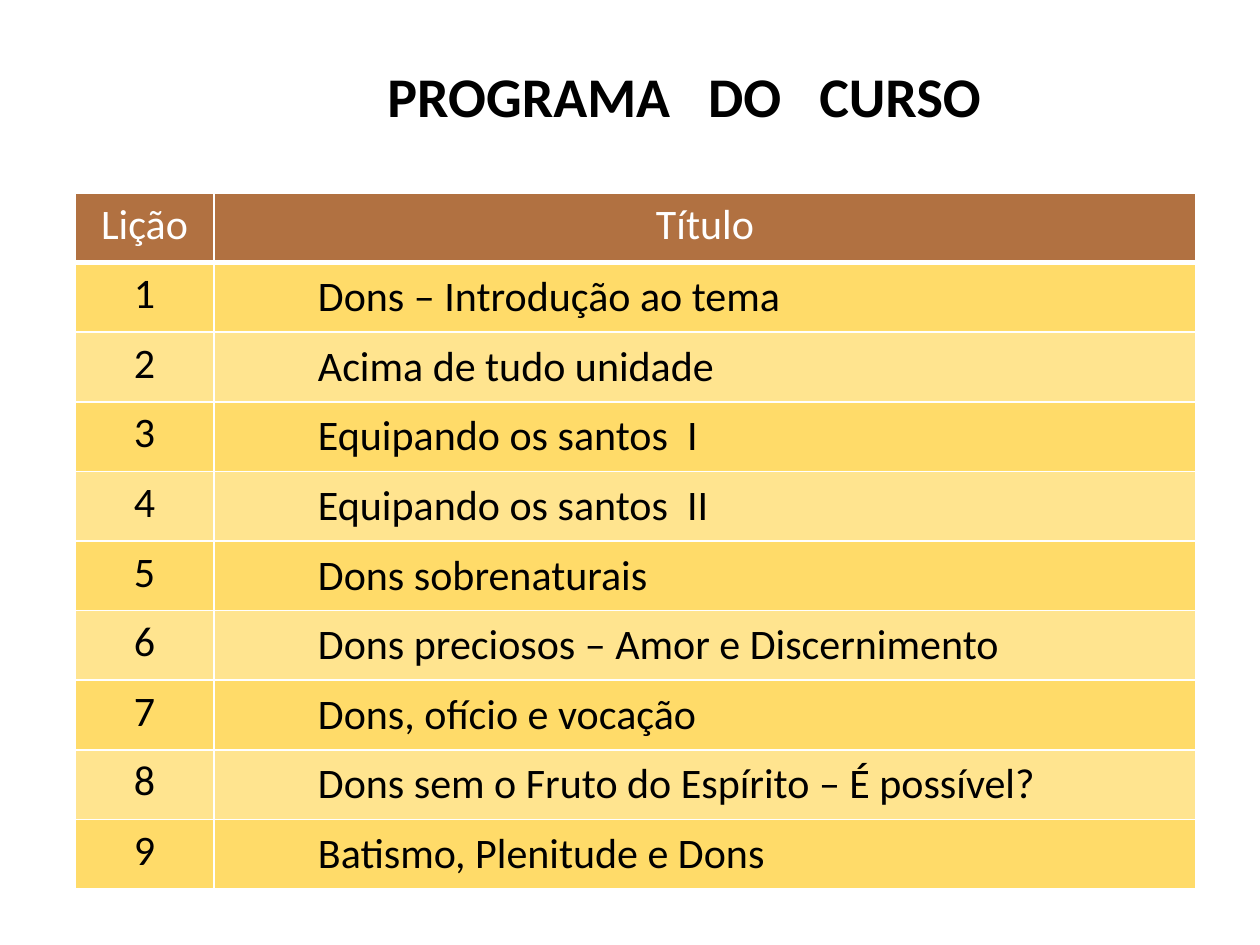
"""Build the course programme slide."""
from lxml import etree
from pptx import Presentation
from pptx.dml.color import RGBColor
from pptx.enum.text import MSO_ANCHOR, MSO_AUTO_SIZE, PP_ALIGN
from pptx.oxml.ns import qn
from pptx.util import Emu, Pt

LEFT, CENTER = PP_ALIGN.LEFT, PP_ALIGN.CENTER
TOP, MIDDLE = MSO_ANCHOR.TOP, MSO_ANCHOR.MIDDLE
GROW = MSO_AUTO_SIZE.SHAPE_TO_FIT_TEXT
SCALE = 914400 / 126
WHITE, BLACK, BROWN = "FFFFFF", "000000", "B17141"
BANDS = ["FFDB69", "FFE48F"]
TITLES = [
    "Dons – Introdução ao tema",
    "Acima de tudo unidade",
    "Equipando os santos  I",
    "Equipando os santos  II",
    "Dons sobrenaturais",
    "Dons preciosos – Amor e Discernimento",
    "Dons, ofício e vocação",
    "Dons sem o Fruto do Espírito – É possível?",
    "Batismo, Plenitude e Dons",
]


def px(size):
    """Turn px into EMU."""
    return Emu(round(size * SCALE))


def color(code):
    """Turn a hex string into a colour."""
    return RGBColor.from_string(code)


def apply(item, form):
    """Set the attributes of an item from a dict."""
    for name, value in form.items():
        setattr(item, name, value)


NUMBER = {"vertical_anchor": TOP}
LESSON = {"vertical_anchor": MIDDLE, "margin_left": px(104),
          "margin_right": px(9), "margin_top": 0, "margin_bottom": 0}


class Deck:
    """Hold the style and the current slide."""

    def __init__(self, wide, high, face):
        """Start a deck with one blank slide."""
        self.show = Presentation()
        self.show.slide_width, self.show.slide_height = px(wide), px(high)
        self.slide = self.show.slides.add_slide(self.show.slide_layouts[6])
        self.face = face

    def label(self, frame, text, size, code, align, bold=False):
        """Put one styled paragraph into a text frame."""
        para = frame.paragraphs[0]
        para.alignment = align
        run = para.add_run()
        run.text = text
        apply(run.font, {"name": self.face, "size": Pt(size), "bold": bold})
        run.font.color.rgb = color(code)

    def title(self, text, box):
        """Add the centred title."""
        frame = self.slide.shapes.add_textbox(*map(px, box)).text_frame
        apply(frame, {"word_wrap": True, "auto_size": GROW})
        self.label(frame, text, 32, BLACK, CENTER, True)

    def border(self, cell, code, widths):
        """Draw the four borders of a cell."""
        props = cell._tc.get_or_add_tcPr()
        for spot, (side, width) in enumerate(zip("LRTB", widths)):
            line = etree.Element(qn("a:ln" + side), w=str(int(Pt(width))))
            fill = etree.SubElement(line, qn("a:solidFill"))
            etree.SubElement(fill, qn("a:srgbClr"), val=code)
            props.insert(spot, line)

    def cell(self, cell, text, fill, code, align, form, base=1):
        """Fill and style one table cell."""
        apply(cell, form)
        cell.fill.solid()
        cell.fill.fore_color.rgb = color(fill)
        self.border(cell, WHITE, (1, 1, 1, base))
        self.label(cell.text_frame, text, 24, code, align)

    def table(self, heads, titles, box, widths):
        """Add the numbered table of lessons."""
        shape = self.slide.shapes.add_table(
            len(titles) + 1, len(heads), *map(px, box))
        grid = shape.table
        for col, width in zip(grid.columns, widths):
            col.width = px(width)
        for spot, head in enumerate(heads):
            self.cell(grid.cell(0, spot), head, BROWN, WHITE, CENTER,
                      NUMBER, 3)
        for row, text in enumerate(titles, 1):
            fill = BANDS[(row - 1) % 2]
            self.cell(grid.cell(row, 0), str(row), fill, BLACK, CENTER, NUMBER)
            self.cell(grid.cell(row, 1), text, fill, BLACK, LEFT, LESSON)


def main():
    """Build and save the slide."""
    deck = Deck(1260, 945, "Calibri")
    deck.title("PROGRAMA   DO   CURSO", (243, 55, 883, 81))
    deck.table(["Lição", "Título"], TITLES, (75, 193, 1121, 696), (139, 982))
    deck.show.save("out.pptx")


if __name__ == "__main__":
    main()
